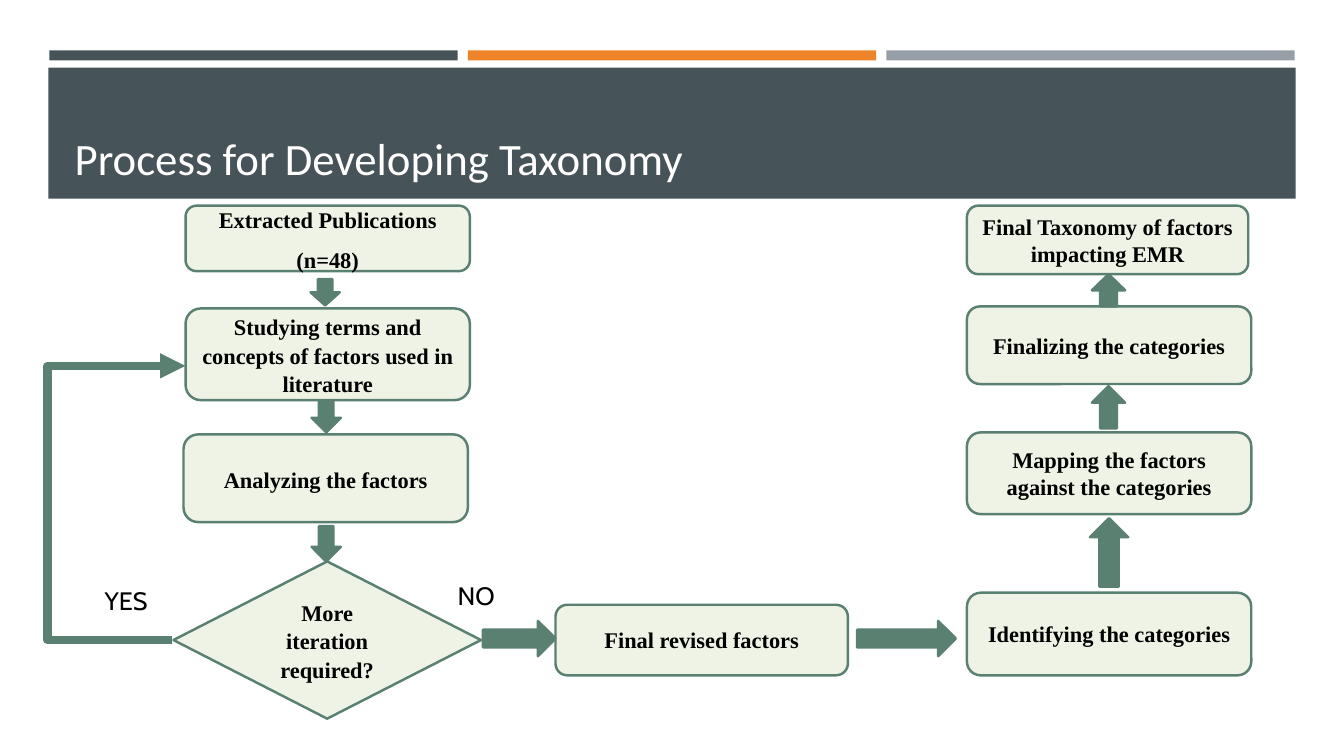
"""Build the taxonomy development flowchart slide."""
from lxml import etree
from pptx import Presentation
from pptx.dml.color import RGBColor
from pptx.enum.shapes import MSO_CONNECTOR, MSO_SHAPE
from pptx.enum.text import MSO_ANCHOR, MSO_AUTO_SIZE, PP_ALIGN
from pptx.oxml.ns import qn
from pptx.util import Inches, Pt

SLATE = RGBColor(0x46, 0x53, 0x59)
ORANGE = RGBColor(0xED, 0x84, 0x28)
GRAY = RGBColor(0x96, 0x9F, 0xA7)
GREEN = RGBColor(0x5A, 0x80, 0x71)
PALE = RGBColor(0xEE, 0xF3, 0xE5)
BLACK = RGBColor(0, 0, 0)
WHITE = RGBColor(0xFF, 0xFF, 0xFF)
RECT, ROUND, DIAMOND = MSO_SHAPE.RECTANGLE, MSO_SHAPE.ROUNDED_RECTANGLE, MSO_SHAPE.DIAMOND
DOWN, RIGHT, UP = MSO_SHAPE.DOWN_ARROW, MSO_SHAPE.RIGHT_ARROW, MSO_SHAPE.UP_ARROW
ELBOW = MSO_CONNECTOR.ELBOW
CENTER, LEFT = PP_ALIGN.CENTER, PP_ALIGN.LEFT
MIDDLE, BOTTOM = MSO_ANCHOR.MIDDLE, MSO_ANCHOR.BOTTOM
NO_FIT = MSO_AUTO_SIZE.NONE

BOX_FONT = {"name": "Times New Roman", "size": Pt(16), "bold": True}
LABEL_FONT = {"name": "Cabin", "size": Pt(18)}
TITLE_FONT = {"name": "Calibri", "size": Pt(32), "bold": False}
LOOSE = {"alignment": CENTER, "line_spacing": 1.07, "space_after": Pt(8)}
TIGHT = {"alignment": CENTER}


def add_block(kind, box, fill, line=None):
    sp = s.shapes.add_shape(kind, *map(Inches, box))
    sp.shadow.inherit = False
    sp.fill.solid()
    sp.fill.fore_color.rgb = fill
    if line is None:
        sp.line.fill.background()
    else:
        sp.line.color.rgb = line
        sp.line.width = Pt(1.75)
    return sp


def write(tf, lines, font, color, para):
    for i, text in enumerate(lines):
        p = tf.paragraphs[0] if i == 0 else tf.add_paragraph()
        for key, value in para.items():
            setattr(p, key, value)
        r = p.add_run()
        r.text = text
        for key, value in font.items():
            setattr(r.font, key, value)
        r.font.color.rgb = color


prs = Presentation()
prs.slide_width, prs.slide_height = Inches(13.33), Inches(7.5)
s = prs.slides.add_slide(prs.slide_layouts[5])

for i, color in enumerate((SLATE, ORANGE, GRAY)):
    add_block(RECT, (0.49 + i * 4.15, 0.5, 4.05, 0.1), color)
band = add_block(RECT, (0.48, 0.67, 12.37, 1.3), SLATE)

title = s.shapes.title
band._element.addnext(title._element)
title.left, title.top, title.width, title.height = map(Inches, (0.64, 0.77, 12.06, 1.11))
tf = title.text_frame
tf.word_wrap, tf.auto_size, tf.vertical_anchor = True, NO_FIT, BOTTOM
write(tf, ["Process for Developing Taxonomy"], TITLE_FONT, WHITE, {"alignment": LEFT})

steps = [
    (ROUND, (1.84, 2.04, 2.82, 0.65), ["Extracted Publications", "(n=48)"], LOOSE),
    (ROUND, (1.84, 3.06, 2.82, 0.91),
     ["Studying terms and concepts of factors used in literature"], LOOSE),
    (ROUND, (1.82, 4.31, 2.82, 0.87), ["Analyzing the factors"], LOOSE),
    (DIAMOND, (1.72, 5.57, 3.05, 1.56), ["More iteration required?"], LOOSE),
    (ROUND, (5.51, 6, 2.9, 0.7), ["Final revised factors"], TIGHT),
    (ROUND, (9.59, 5.88, 2.82, 0.82), ["Identifying the categories"], TIGHT),
    (ROUND, (9.59, 4.29, 2.82, 0.81), ["Mapping the factors against the categories"], TIGHT),
    (ROUND, (9.59, 3.04, 2.82, 0.77), ["Finalizing the categories"], TIGHT),
    (ROUND, (9.59, 2.04, 2.79, 0.68), ["Final Taxonomy of factors impacting EMR"], TIGHT),
]
for kind, box, lines, para in steps:
    tf = add_block(kind, box, PALE, GREEN).text_frame
    tf.word_wrap, tf.vertical_anchor = True, MIDDLE
    write(tf, lines, BOX_FONT, BLACK, para)

arrows = [
    (DOWN, (3.08, 2.77, 0.29, 0.26)),
    (DOWN, (3.09, 3.98, 0.29, 0.31)),
    (DOWN, (3.09, 5.22, 0.29, 0.35)),
    (RIGHT, (4.79, 6.16, 0.72, 0.35)),
    (RIGHT, (8.5, 6.16, 0.98, 0.35)),
    (UP, (10.81, 5.14, 0.38, 0.68)),
    (UP, (10.83, 3.83, 0.33, 0.42)),
    (UP, (10.83, 2.72, 0.33, 0.32)),
]
for kind, box in arrows:
    add_block(kind, box, GREEN, GREEN)

loop_start, loop_end, loop_left = 1.71, 1.84, 0.47
loop = s.shapes.add_connector(
    ELBOW, Inches(loop_start), Inches(6.35), Inches(loop_end), Inches(3.63))
loop.line.color.rgb = GREEN
loop.line.width = Pt(6)
bend = round((loop_left - loop_start) / (loop_end - loop_start) * 100000)
sp_pr = loop._element.spPr
guides = sp_pr.find(qn("a:prstGeom")).get_or_add_avLst()
etree.SubElement(guides, qn("a:gd"), name="adj1", fmla=f"val {bend}")
ln = sp_pr.find(qn("a:ln"))
etree.SubElement(ln, qn("a:round"))
etree.SubElement(ln, qn("a:tailEnd"), type="triangle")
etree.SubElement(sp_pr, qn("a:effectLst"))

for text, box in (("YES", (0.94, 5.76, 0.66, 0.4)), ("NO", (4.44, 5.71, 0.72, 0.4))):
    tf = s.shapes.add_textbox(*map(Inches, box)).text_frame
    tf.word_wrap = True
    write(tf, [text], LABEL_FONT, BLACK, {"alignment": LEFT})

prs.save("out.pptx")
